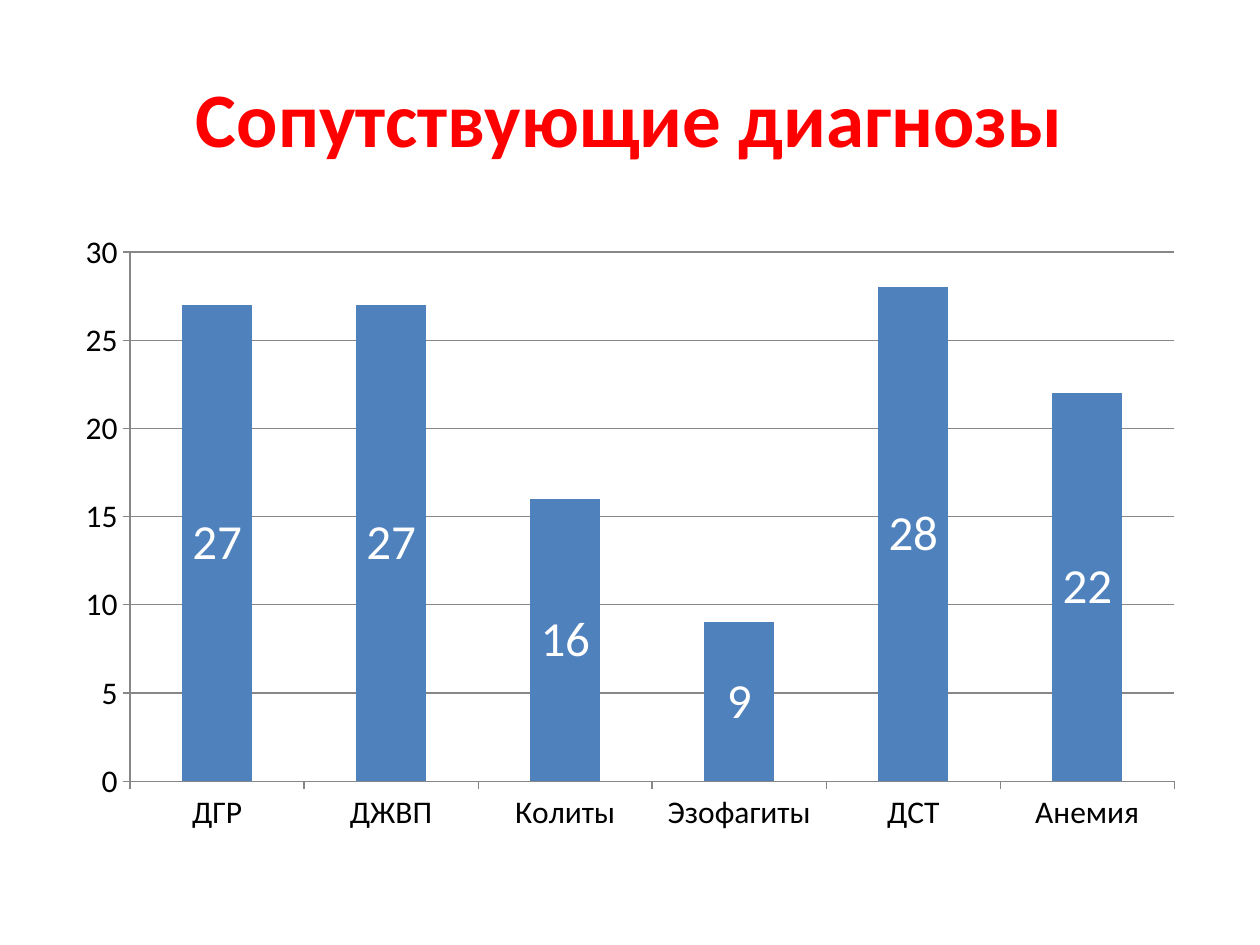
from pptx import Presentation
from pptx import util as u
from pptx.chart import data as chart_data
from pptx.dml.color import RGBColor
from pptx.enum import chart as ch
from pptx.enum import text as t

FONT = "Calibri"
RED = RGBColor(0xFF, 0x00, 0x00)
BLUE = RGBColor(0x4F, 0x81, 0xBD)
BLACK = RGBColor(0x00, 0x00, 0x00)
WHITE = RGBColor(0xFF, 0xFF, 0xFF)
GREY = RGBColor(0x87, 0x87, 0x87)

DIAGNOSES = {
    "ДГР": 27,
    "ДЖВП": 27,
    "Колиты": 16,
    "Эзофагиты": 9,
    "ДСТ": 28,
    "Анемия": 22,
}


def format_font(font, size, color, bold=False):
    font.name = FONT
    font.size = u.Pt(size)
    font.bold = bold
    font.color.rgb = color


def write_text(frame, words, size=18, color=BLACK, bold=False,
               align=t.PP_ALIGN.CENTER, anchor=t.MSO_ANCHOR.MIDDLE):
    frame.word_wrap = True
    frame.vertical_anchor = anchor
    para = frame.paragraphs[0]
    para.alignment = align
    span = para.add_run()
    span.text = words
    format_font(span.font, size, color, bold)


def place_title(page, words):
    title = page.shapes.title
    title.left, title.top = u.Inches(0.5), u.Inches(0.3)
    title.width, title.height = u.Inches(9), u.Inches(1.25)
    write_text(title.text_frame, words, size=44, color=RED, bold=True)


def format_line(line):
    line.color.rgb = GREY
    line.width = u.Pt(0.75)


def format_axis(axis, gridlines):
    axis.major_tick_mark = ch.XL_TICK_MARK.OUTSIDE
    axis.minor_tick_mark = ch.XL_TICK_MARK.NONE
    axis.has_major_gridlines = gridlines
    format_line(axis.format.line)
    if gridlines:
        format_line(axis.major_gridlines.format.line)


def add_column_chart(page, values):
    source = chart_data.CategoryChartData()
    source.categories = list(values)
    source.add_series("Series 1", list(values.values()))
    chart = page.shapes.add_chart(
        ch.XL_CHART_TYPE.COLUMN_STACKED, u.Inches(0.5), u.Inches(1.75),
        u.Inches(9), u.Inches(4.95), source).chart
    chart.has_title = False
    chart.has_legend = False
    format_font(chart.font, 18, BLACK)

    # Axes
    format_axis(chart.category_axis, gridlines=False)
    format_axis(chart.value_axis, gridlines=True)
    chart.value_axis.minimum_scale = 0
    chart.value_axis.maximum_scale = 30
    chart.value_axis.major_unit = 5

    # Columns and their labels
    plot = chart.plots[0]
    plot.vary_by_categories = False
    plot.gap_width = 150
    plot.overlap = 100
    series = plot.series[0]
    series.format.fill.solid()
    series.format.fill.fore_color.rgb = BLUE
    labels = series.data_labels
    labels.show_value = True
    labels.position = ch.XL_LABEL_POSITION.CENTER
    format_font(labels.font, 28, WHITE)


def main():
    deck = Presentation()
    deck.slide_width, deck.slide_height = u.Inches(10), u.Inches(7.5)
    page = deck.slides.add_slide(deck.slide_layouts.get_by_name("Title Only"))
    place_title(page, "Сопутствующие диагнозы")
    add_column_chart(page, DIAGNOSES)
    deck.save("out.pptx")


if __name__ == "__main__":
    main()
